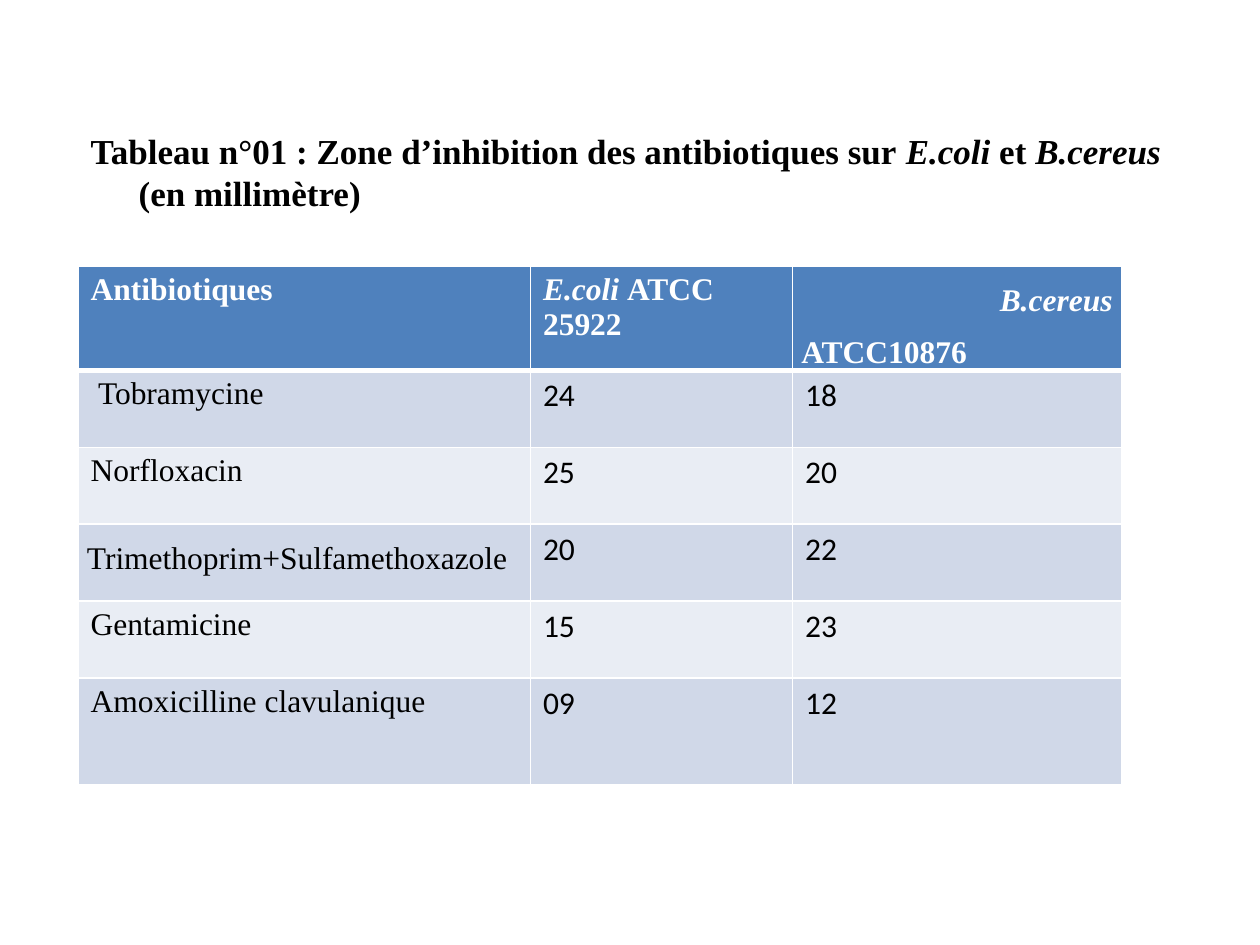
import pptx
import pptx.dml.color
import pptx.enum.text
import pptx.oxml
import pptx.oxml.ns
import pptx.util

ALIGN = pptx.enum.text.PP_ALIGN
SERIF = "Times New Roman"
SANS = "Calibri"


def color(value):
    return pptx.dml.color.RGBColor.from_string(value)


class TableSlide:
    header_fill = "4F81BD"
    band_fills = ("D0D8E8", "E9EDF4")
    border = "FFFFFF"
    header_text = "FFFFFF"
    text = "000000"

    def __init__(self, presentation):
        self.width = presentation.slide_width
        self.height = presentation.slide_height
        self.slide = presentation.slides.add_slide(presentation.slide_layouts[5])

    def box(self, left, top, width, height):
        return (round(left * self.width), round(top * self.height),
                round(width * self.width), round(height * self.height))

    def add_runs(self, paragraph, runs, size, font, fill, bold):
        for words, italic in runs:
            run = paragraph.add_run()
            run.text = words
            if italic:
                run.font.italic = True
        paragraph.font.size = pptx.util.Pt(size)
        paragraph.font.name = font
        paragraph.font.bold = bold
        paragraph.font.color.rgb = color(fill)

    def title(self, box, runs, hanging):
        shape = self.slide.shapes.title
        shape.left, shape.top, shape.width, shape.height = self.box(*box)
        frame = shape.text_frame
        frame.auto_size = pptx.enum.text.MSO_AUTO_SIZE.NONE
        frame.vertical_anchor = pptx.enum.text.MSO_ANCHOR.TOP
        paragraph = frame.paragraphs[0]
        paragraph.alignment = ALIGN.LEFT
        properties = paragraph._p.get_or_add_pPr()
        indent = round(hanging * self.width)
        properties.set("marL", str(indent))
        properties.set("indent", str(-indent))
        self.add_runs(paragraph, runs, 20, SERIF, self.text, True)

    def table(self, box, columns, rows):
        table = self.slide.shapes.add_table(len(rows), len(columns), *self.box(*box)).table
        for column, share in zip(table.columns, columns):
            column.width = round(share * self.width)
        for row, share in zip(table.rows, rows):
            row.height = round(share * self.height)
        return table

    def cell(self, cell, row, paragraphs, font, alignments=(ALIGN.LEFT,), spaced=False):
        header = row == 0
        self.borders(cell, header)
        cell.fill.solid()
        cell.fill.fore_color.rgb = color(
            self.header_fill if header else self.band_fills[(row - 1) % 2])
        if spaced:
            cell.margin_left = cell.margin_right = round(0.007 * self.width)
            cell.margin_top = cell.margin_bottom = 0
        frame = cell.text_frame
        for index, runs in enumerate(paragraphs):
            paragraph = frame.add_paragraph() if index else frame.paragraphs[0]
            paragraph.alignment = alignments[index]
            if spaced:
                paragraph.line_spacing = 1.5
            self.add_runs(paragraph, runs, 18, font,
                          self.header_text if header else self.text, header)

    def borders(self, cell, header):
        properties = cell._tc.get_or_add_tcPr()
        for side in "LRTB":
            points = 3 if header and side == "B" else 1
            properties.append(pptx.oxml.parse_xml(
                f'<a:ln{side} {pptx.oxml.ns.nsdecls("a")} w="{pptx.util.Pt(points)}">'
                f'<a:solidFill><a:srgbClr val="{self.border}"/></a:solidFill></a:ln{side}>'))


def main():
    presentation = pptx.Presentation()
    presentation.slide_width = pptx.util.Inches(10)
    presentation.slide_height = pptx.util.Inches(7.5)
    page = TableSlide(presentation)

    page.title((0.062, 0.13, 0.9, 0.12), [
        ("Tableau n°01 : Zone d’inhibition des antibiotiques sur ", False),
        ("E.coli", True), (" et ", False), ("B.cereus ", True),
        ("(en millimètre)", False)], 0.038)

    results = [
        (" Tobramycine", "24", "18"),
        ("Norfloxacin", "25", "20"),
        ("Trimethoprim+Sulfamethoxazole", "20", "22"),
        ("Gentamicine", "15", "23"),
        ("Amoxicilline clavulanique", "09", "12"),
    ]
    columns = [0.359, 0.208, 0.261]
    rows = [0.82 / 7.5] + [0.61 / 7.5] * 4 + [0.85 / 7.5]
    table = page.table((0.062, 2.11 / 7.5, sum(columns), sum(rows)), columns, rows)

    page.cell(table.cell(0, 0), 0, [[("Antibiotiques", False)]], SERIF)
    page.cell(table.cell(0, 1), 0, [[("E.coli ", True), ("ATCC 25922", False)]], SERIF)
    page.cell(table.cell(0, 2), 0, [[("B.cereus", True)], [("ATCC10876", False)]], SERIF,
              (ALIGN.RIGHT, ALIGN.LEFT), spaced=True)
    for row, result in enumerate(results, 1):
        for column, words in enumerate(result):
            page.cell(table.cell(row, column), row, [[(words, False)]],
                      SANS if column else SERIF, spaced="+" in words)

    presentation.save("out.pptx")


if __name__ == "__main__":
    main()
